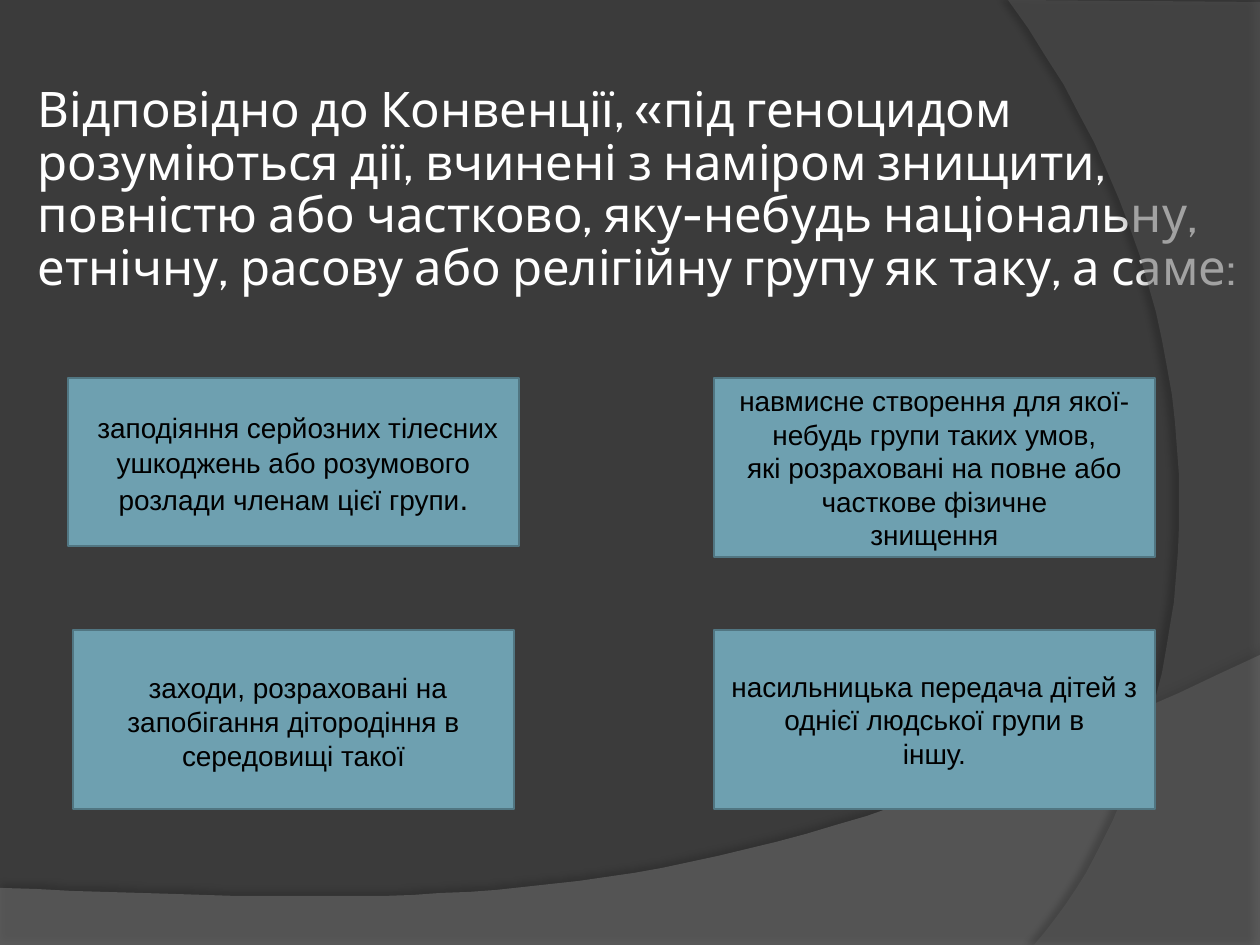
from dataclasses import dataclass

from lxml import etree
from pptx import Presentation
from pptx import util as u
from pptx.dml.color import RGBColor
from pptx.enum import shapes, text
from pptx.oxml import ns

SCALE = 914400 / 126


def px(n):
    """Turn pixels into EMU."""
    return u.Emu(round(n * SCALE))


@dataclass(frozen=True)
class Theme:
    """Colours, fonts and type sizes of the deck."""
    background: str = "3B3B3B"
    wave: str = "7F7F7F"
    arc: str = "5E5E5E"
    shadow: str = "000000"
    box: str = "6EA0B0"
    border: str = "517682"
    title: str = "FFFFFF"
    body: str = "000000"
    title_font: str = "Cabin"
    body_font: str = "Arial"
    title_size: int = 28
    body_size: int = 16
    large_size: int = 18


def bezier(start, c1, c2, end, steps=40):
    """Sample a cubic curve as a list of points, without its start."""
    points = []
    for i in range(1, steps + 1):
        t = i / steps
        weights = ((1 - t) ** 3, 3 * t * (1 - t) ** 2, 3 * t * t * (1 - t), t ** 3)
        points.append(tuple(sum(w * p[axis] for w, p in zip(weights, (start, c1, c2, end)))
                            for axis in (0, 1)))
    return points


class Deck:
    """Holds the theme and the current slide and draws each kind of element."""

    def __init__(self, prs, theme):
        self.theme = theme
        self.s = prs.slides.add_slide(prs.slide_layouts[5])
        self.fill(self.s.background, theme.background)

    def fill(self, target, color):
        target.fill.solid()
        target.fill.fore_color.rgb = RGBColor.from_string(color)

    def font(self, font, name, size, color):
        font.name, font.size = name, u.Pt(size)
        font.color.rgb = RGBColor.from_string(color)

    def swoosh(self, points, color, opacity, shadow_opacity, distance, direction):
        builder = self.s.shapes.build_freeform(*points[0], scale=SCALE)
        builder.add_line_segments(points[1:], close=True)
        sp = builder.convert_to_shape()
        self.fill(sp, color)
        sp.line.fill.background()
        sp.shadow.inherit = False
        rgb = sp.fill._xPr.find(".//" + ns.qn("a:srgbClr"))
        etree.SubElement(rgb, ns.qn("a:alpha"), val=str(opacity * 1000))
        effects = sp.element.spPr.find(ns.qn("a:effectLst"))
        shadow = etree.SubElement(effects, ns.qn("a:outerShdw"), blurRad=str(u.Pt(4)),
                                  dist=str(u.Pt(distance)), dir=str(direction * 60000),
                                  algn="ctr", rotWithShape="0")
        tint = etree.SubElement(shadow, ns.qn("a:srgbClr"), val=self.theme.shadow)
        etree.SubElement(tint, ns.qn("a:alpha"), val=str(shadow_opacity * 1000))

    def title(self, words, x, y, w, h):
        sp = self.s.shapes.title
        sp.left, sp.top, sp.width, sp.height = map(px, (x, y, w, h))
        tf = sp.text_frame
        tf.text = words
        tf.word_wrap = True
        tf.auto_size = text.MSO_AUTO_SIZE.TEXT_TO_FIT_SHAPE
        tf.vertical_anchor = text.MSO_ANCHOR.MIDDLE
        tf.margin_left = tf.margin_right = tf.margin_top = tf.margin_bottom = px(6)
        p = tf.paragraphs[0]
        p.alignment = text.PP_ALIGN.LEFT
        self.font(p.font, self.theme.title_font, self.theme.title_size, self.theme.title)

    def box(self, words, x, y, w, h, lead="", tail=""):
        sp = self.s.shapes.add_shape(shapes.MSO_SHAPE.RECTANGLE, *map(px, (x, y, w, h)))
        sp.shadow.inherit = False
        self.fill(sp, self.theme.box)
        sp.line.color.rgb = RGBColor.from_string(self.theme.border)
        sp.line.width = u.Pt(1.5)
        tf = sp.text_frame
        tf.word_wrap = True
        tf.vertical_anchor = text.MSO_ANCHOR.MIDDLE
        p = tf.paragraphs[0]
        p.alignment = text.PP_ALIGN.CENTER
        self.font(p.font, self.theme.body_font, self.theme.body_size, self.theme.body)
        if lead:
            self.large_run(p, lead)
        for i, line in enumerate(words.split("\n")):
            if i:
                p.add_line_break()
            p.add_run().text = line
        if tail:
            self.large_run(p, tail)

    def large_run(self, p, words):
        r = p.add_run()
        r.text = words
        r.font.size = u.Pt(self.theme.large_size)


def main():
    """Build the slide and save it."""
    prs = Presentation()
    prs.slide_width, prs.slide_height = px(1260), px(945)
    theme = Theme()
    deck = Deck(prs, theme)

    wave = [(0, 888), (0, 945), (1260, 945), (1260, 655)]
    wave += bezier(wave[-1], (704, 919), (493, 906), wave[0])
    deck.swoosh(wave, theme.wave, 45, 35, 3.5, 270)
    arc = [(1260, 2), (1260, 945), (1034, 945)]
    arc += bezier(arc[-1], (1178, 780), (1283, 378), (1008, 0))
    deck.swoosh(arc, theme.arc, 40, 45, 4, 180)

    deck.title("Відповідно до Конвенції, «під геноцидом розуміються дії, вчинені з наміром "
               "знищити, повністю або частково, яку-небудь національну, етнічну, расову "
               "або релігійну групу як таку, а саме:", 32, 63, 1228, 242)

    right, top, bottom, w, h = 714, 378, 630, 441, 179
    deck.box("заподіяння серйозних тілесних ушкоджень або розумового\n"
             "розлади членам цієї групи", 68, top, 451, 168, lead=" ", tail=".")
    deck.box("навмисне створення для якої-небудь групи таких умов,\n"
             "які розраховані на повне або часткове фізичне\nзнищення", right, top, w, h)
    deck.box("заходи, розраховані на запобігання дітородіння в середовищі такої",
             73, bottom, w, h, lead=" ")
    deck.box("насильницька передача дітей з однієї людської групи в\nіншу.",
             right, bottom, w, h)
    prs.save("out.pptx")


if __name__ == "__main__":
    main()
